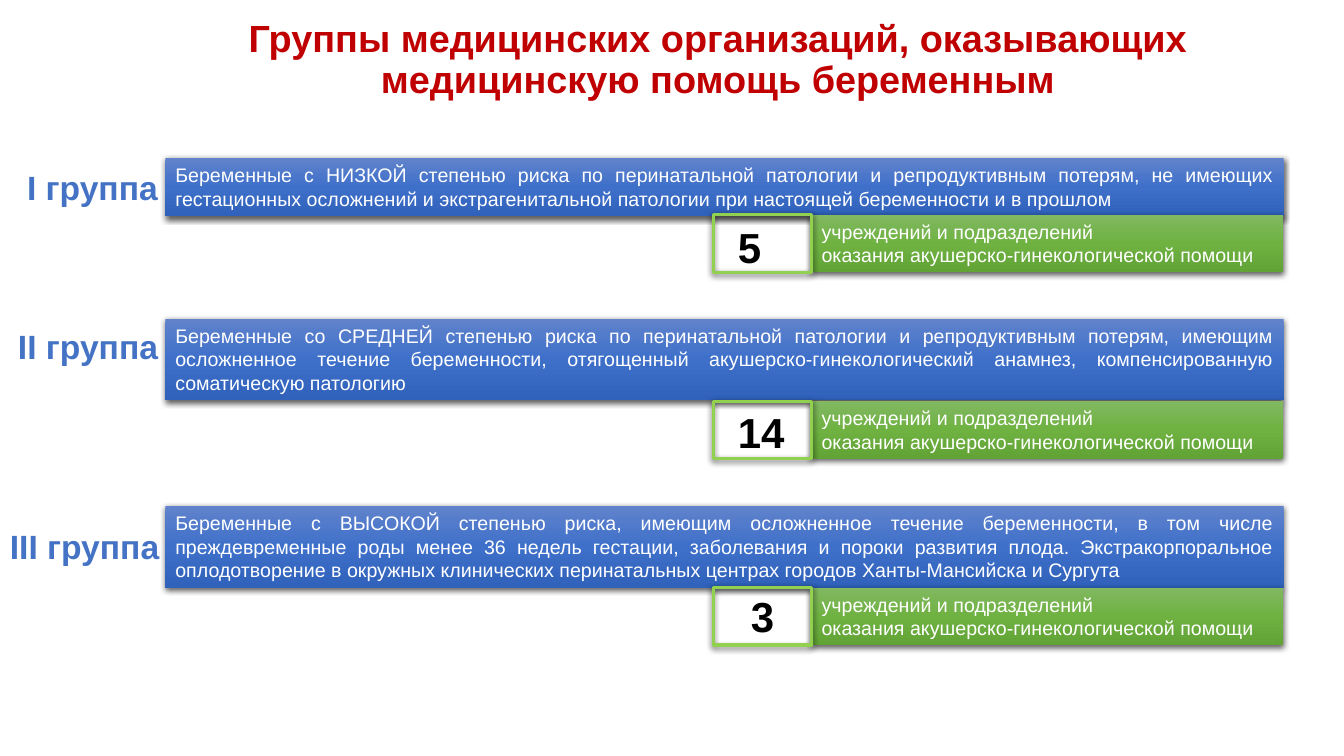
from copy import deepcopy
from lxml.etree import SubElement as Sub
from pptx import Presentation
from pptx.dml.color import RGBColor
from pptx.enum.shapes import MSO_SHAPE as Kind
from pptx.enum.text import MSO_ANCHOR as Anchor, MSO_AUTO_SIZE as Auto, PP_ALIGN as Align
from pptx.oxml import parse_xml
from pptx.oxml.ns import nsdecls, qn
from pptx.util import Inches, Pt

RED = RGBColor(0xC0, 0x00, 0x00)
BLUE = RGBColor(0x44, 0x72, 0xC4)
LIME = RGBColor(0x92, 0xD0, 0x50)
WHITE = RGBColor(0xFF, 0xFF, 0xFF)
BLACK = RGBColor(0x00, 0x00, 0x00)
BLUES = [RGBColor(0x61, 0x83, 0xCB), RGBColor(0x3E, 0x70, 0xCA), RGBColor(0x30, 0x62, 0xBB)]
GREENS = [RGBColor(0x81, 0xB8, 0x61), RGBColor(0x6F, 0xB2, 0x42), RGBColor(0x62, 0xA3, 0x36)]

HEAD = {"size": Pt(27), "bold": True, "color": RED}
BODY = {"size": Pt(14), "bold": False, "color": WHITE}
LABEL = {"size": Pt(24), "bold": True, "color": BLUE}
COUNT = {"size": Pt(30), "bold": True, "color": BLACK}

TITLE = "Группы медицинских организаций, оказывающих медицинскую помощь беременным"
UNITS = "учреждений и подразделений\nоказания акушерско-гинекологической помощи"
GROUPS = [
    {"label": ("I группа", 0.17, 1.61, 1.78), "bar": (1.57, 0.57),
     "count": ("5", 7.22, 2.15, 0.92), "units": 2.13,
     "text": "Беременные с НИЗКОЙ степенью риска по перинатальной патологии и "
             "репродуктивным потерям, не имеющих гестационных осложнений и "
             "экстрагенитальной патологии при настоящей беременности и в прошлом"},
    {"label": ("II группа", 0.08, 3.18, 1.78), "bar": (3.16, 0.81),
     "count": ("14", 7.22, 3.98, 0.83), "units": 3.98,
     "text": "Беременные со СРЕДНЕЙ степенью риска по перинатальной патологии и "
             "репродуктивным потерям, имеющим осложненное течение беременности, "
             "отягощенный акушерско-гинекологический анамнез, компенсированную "
             "соматическую патологию"},
    {"label": ("III группа", 0, 5.17, 1.73), "bar": (5.02, 0.81),
     "count": ("3", 7.35, 5.81, 0.44), "units": 5.83,
     "text": "Беременные с ВЫСОКОЙ степенью риска, имеющим осложненное течение "
             "беременности, в том числе преждевременные роды менее 36 недель гестации, "
             "заболевания и пороки развития плода. Экстракорпоральное оплодотворение в "
             "окружных клинических перинатальных центрах городов Ханты-Мансийска и Сургута"},
]


def write(shape, text, style, align=Align.LEFT, anchor=Anchor.TOP, auto=Auto.SHAPE_TO_FIT_TEXT):
    frame = shape.text_frame
    frame.text = text
    for name, value in {"word_wrap": True, "auto_size": auto, "vertical_anchor": anchor}.items():
        setattr(frame, name, value)
    for para in frame.paragraphs:
        para.alignment = align
        for run in para.runs:
            run.font.name = "Arial"
            for name, value in style.items():
                if name == "color":
                    run.font.color.rgb = value
                else:
                    setattr(run.font, name, value)


def add_text(slide, box, text, style, **opts):
    shape = slide.shapes.add_textbox(*map(Inches, box))
    write(shape, text, style, **opts)
    return shape


def outline(shape):
    for run in shape.text_frame.paragraphs[0].runs:
        line = parse_xml(f'<a:ln {nsdecls("a")} w="9525"><a:solidFill>'
                         f'<a:srgbClr val="{WHITE}"/></a:solidFill></a:ln>')
        run.font._element.insert(0, line)


def shade(shape):
    shape.shadow.inherit = False
    effect = shape._element.spPr.find(qn("a:effectLst"))
    drop = Sub(effect, qn("a:outerShdw"), blurRad=str(Pt(4.5)), dist=str(Pt(1.5)),
               dir="5400000", algn="ctr", rotWithShape="0")
    color = Sub(drop, qn("a:srgbClr"), val=str(BLACK))
    Sub(color, qn("a:alpha"), val="63000")


def add_rect(slide, box):
    shape = slide.shapes.add_shape(Kind.RECTANGLE, *map(Inches, box))
    shade(shape)
    return shape


def add_bar(slide, box, colors, text, align=Align.LEFT):
    shape = add_rect(slide, box)
    shape.line.fill.background()
    fill = shape.fill
    fill.gradient()
    fill.gradient_angle = 270
    stops = shape._element.spPr.find(qn("a:gradFill")).find(qn("a:gsLst"))
    stops.insert(1, deepcopy(stops[0]))
    for stop, color, place in zip(fill.gradient_stops, colors, (0, 0.5, 1)):
        stop.color.rgb = color
        stop.position = place
    write(shape, text, BODY, align)


def add_frame(slide, box):
    shape = add_rect(slide, box)
    shape.fill.background()
    shape.line.color.rgb = LIME
    shape.line.width = Pt(2.25)


def main():
    deck = Presentation()
    deck.slide_width, deck.slide_height = Inches(13.33), Inches(7.5)
    slide = deck.slides.add_slide(deck.slide_layouts[6])
    for group in GROUPS:
        top, height = group["bar"]
        add_bar(slide, (1.64, top, 11.09, height), BLUES, group["text"], Align.JUSTIFY)
    for group in GROUPS:
        text, left, top, width = group["label"]
        outline(add_text(slide, (left, top, width, 0.5), text, LABEL, align=Align.JUSTIFY))
        text, left, top, width = group["count"]
        add_text(slide, (left, top, width, 0.61), text, COUNT)
    title = add_text(slide, (1.73, 0.2, 10.78, 0.81), TITLE, HEAD,
                     align=Align.CENTER, anchor=Anchor.MIDDLE, auto=Auto.NONE)
    title.text_frame.paragraphs[0].line_spacing = 0.9
    for group in GROUPS:
        top = group["units"]
        add_bar(slide, (8.05, top, 4.68, 0.57), GREENS, UNITS)
        add_frame(slide, (7.08, top, 0.97, 0.57))
    deck.save("out.pptx")


if __name__ == "__main__":
    main()
